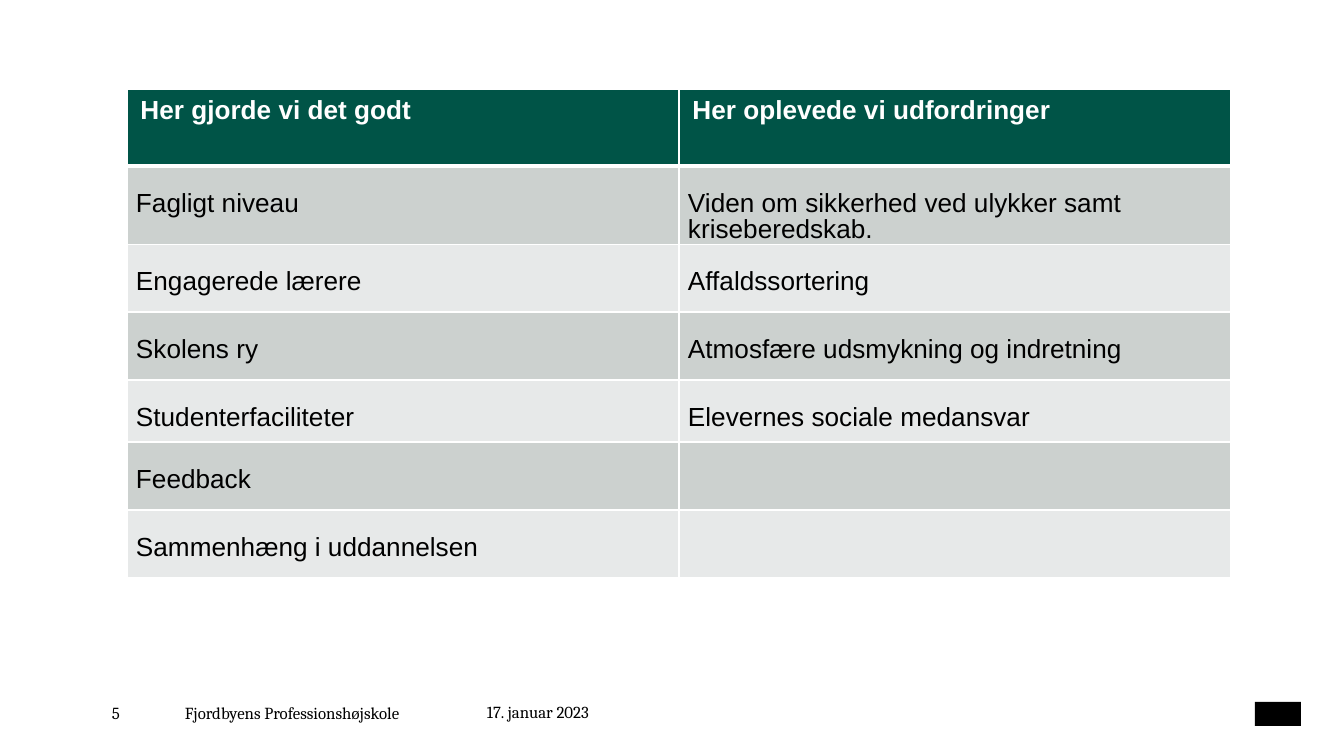
from lxml.etree import SubElement
from pptx import Presentation
from pptx.dml.color import RGBColor as RGB
from pptx.enum.shapes import MSO_SHAPE as Kind
from pptx.oxml.ns import qn
from pptx.util import Emu, Pt

HUE = {
    "head": "005447",
    "dark": "CCD1CF",
    "light": "E7E9E9",
    "white": "FFFFFF",
    "black": "000000",
}


def px(n):
    return Emu(round(n * 914400 / 134.4))


def edge(cell, side, width):
    """Draw one white cell border; call it before the cell is filled."""
    line = SubElement(cell._tc.get_or_add_tcPr(), qn("a:" + side), w=str(Pt(width)))
    fill = SubElement(line, qn("a:solidFill"))
    SubElement(fill, qn("a:srgbClr"), val=HUE["white"])


prs = Presentation()
prs.slide_width, prs.slide_height = px(1344), px(756)
slide = prs.slides.add_slide(prs.slide_layouts[6])

# Table
rows = [
    ("Her gjorde vi det godt", "Her oplevede vi udfordringer"),
    ("Fagligt niveau", "Viden om sikkerhed ved ulykker samt kriseberedskab."),
    ("Engagerede lærere", "Affaldssortering"),
    ("Skolens ry", "Atmosfære udsmykning og indretning"),
    ("Studenterfaciliteter", "Elevernes sociale medansvar"),
    ("Feedback", ""),
    ("Sammenhæng i uddannelsen", ""),
]
tall = [77, 78, 68, 68, 62, 68, 68]
wide = 552

table = slide.shapes.add_table(
    len(rows), 2, px(127), px(89), px(2 * wide), px(sum(tall))
).table
for col in table.columns:
    col.width = px(wide)

for r, texts in enumerate(rows):
    table.rows[r].height = px(tall[r])
    head = r == 0
    for c, text in enumerate(texts):
        cell = table.cell(r, c)
        for side in ("lnL", "lnR", "lnT", "lnB"):
            thick = (r, side) in ((0, "lnB"), (1, "lnT"))
            edge(cell, side, 3 if thick else 1)
        cell.fill.solid()
        tone = "head" if head else "dark" if r % 2 else "light"
        cell.fill.fore_color.rgb = RGB.from_string(HUE[tone])
        cell.text = text
        para = cell.text_frame.paragraphs[0]
        font = para.font
        font.name, font.size, font.bold = "Arial", Pt(14), head
        font.color.rgb = RGB.from_string(HUE["white" if head else "black"])
        if not head:
            para.line_spacing = Pt(14)
            cell.margin_left = cell.margin_right = px(9)
            cell.margin_top, cell.margin_bottom = px(26), 0

# Footer
for text, x, y, w in [
    ("5", 112, 703, 62),
    ("Fjordbyens Professionshøjskole", 185, 703, 280),
    ("17. januar 2023", 487, 702, 376),
]:
    frame = slide.shapes.add_textbox(px(x), px(y), px(w), px(20)).text_frame
    frame.word_wrap = True
    frame.margin_left = frame.margin_right = 0
    frame.margin_top = frame.margin_bottom = 0
    para = frame.paragraphs[0]
    para.text = text
    para.font.name, para.font.size = "Cambria", Pt(9)
    para.font.color.rgb = RGB.from_string(HUE["black"])

# Plain mark in the corner
mark = slide.shapes.add_shape(Kind.RECTANGLE, px(1255), px(702), px(46), px(24))
mark.shadow.inherit = False
mark.fill.solid()
mark.fill.fore_color.rgb = RGB.from_string(HUE["black"])
mark.line.fill.background()

prs.save("out.pptx")
